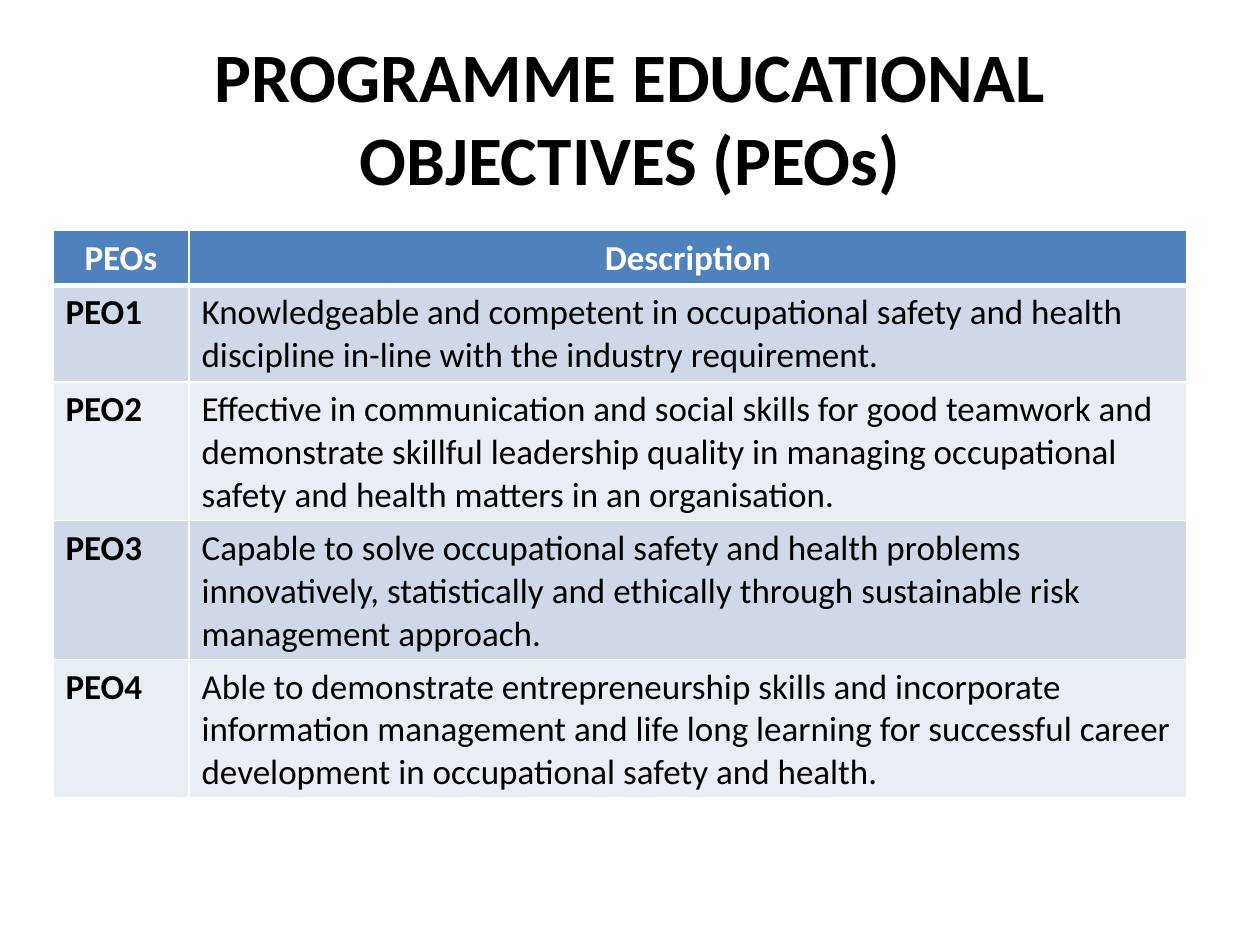
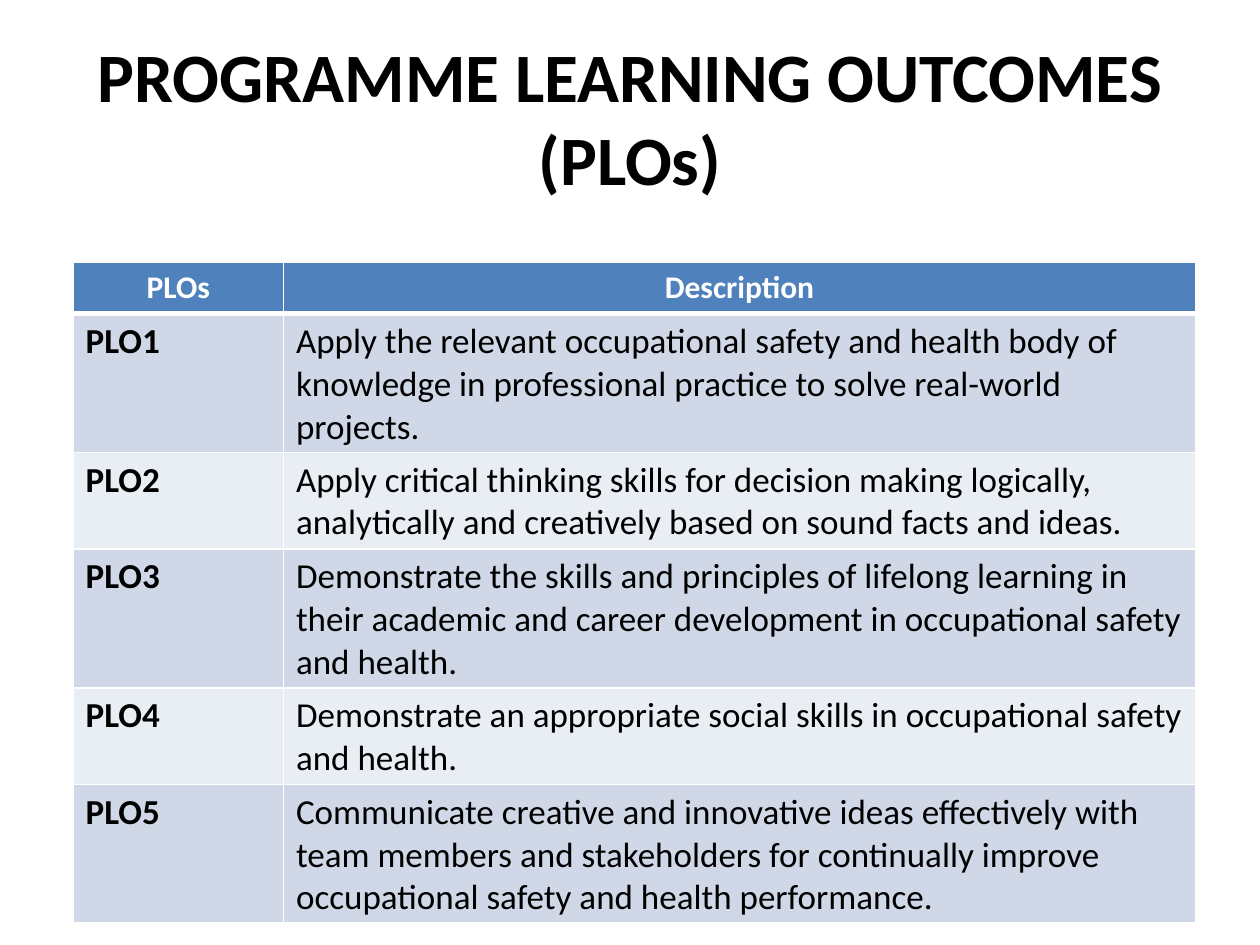
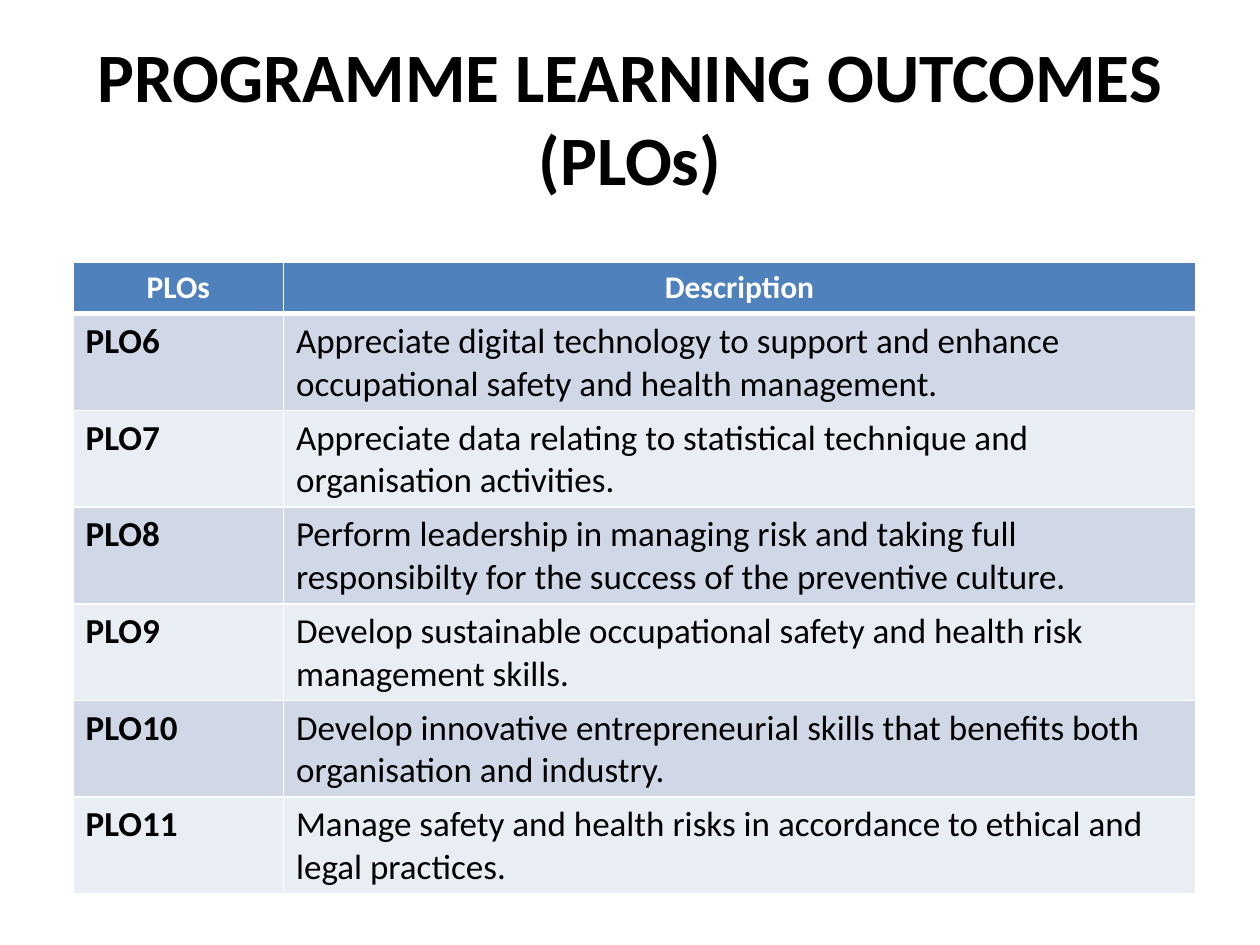
from lxml import etree
from pptx import Presentation
from pptx.dml.color import RGBColor
from pptx.enum.text import MSO_ANCHOR, PP_ALIGN
from pptx.oxml.ns import qn
from pptx.util import Inches, Pt

MID = MSO_ANCHOR.MIDDLE
LEFT = PP_ALIGN.LEFT
CENTER = PP_ALIGN.CENTER

HUES = {
    "text": "000000",
    "white": "FFFFFF",
    "head": "4F81BD",
    "odd": "D0D8E8",
    "even": "E9EDF4",
}

TITLE = {"size": Pt(39.6), "bold": True}
LABEL = {"size": Pt(20), "bold": True}
BODY = {"size": Pt(20), "bold": False}

ROW = 0.41
THIN = 1
THICK = 3

PEO = {
    "title": "PROGRAMME EDUCATIONAL OBJECTIVES (PEOs)",
    "head": "PEOs",
    "size": 20,
    "spot": (0.42, 1.83),
    "cols": (1.08, 7.92),
}
PLO = {
    "title": "PROGRAMME LEARNING OUTCOMES (PLOs)",
    "head": "PLOs",
    "size": 18,
    "spot": (0.58, 2.08),
    "cols": (1.67, 7.24),
}

GOALS = [
    "Knowledgeable and competent in occupational safety and health discipline in-line with the industry requirement.",
    "Effective in communication and social skills for good teamwork and demonstrate skillful leadership quality "
    "in managing occupational safety and health matters in an organisation.",
    "Capable to solve occupational safety and health problems innovatively, statistically and ethically "
    "through sustainable risk management approach.",
    "Able to demonstrate entrepreneurship skills and incorporate information management and life long learning "
    "for successful career development in occupational safety and health.",
]
SKILLS = [
    "Apply the relevant occupational safety and health body of knowledge in professional practice "
    "to solve real-world projects.",
    "Apply critical thinking skills for decision making logically, analytically and creatively "
    "based on sound facts and ideas.",
    "Demonstrate the skills and principles of lifelong learning in their academic and career development "
    "in occupational safety and health.",
    "Demonstrate an appropriate social skills in occupational safety and health.",
    "Communicate creative and innovative ideas effectively with team members and stakeholders "
    "for continually improve occupational safety and health performance.",
    "Appreciate digital technology to support and enhance occupational safety and health management.",
    "Appreciate data relating to statistical technique and organisation activities.",
    "Perform leadership in managing risk and taking full responsibilty for the success of the preventive culture.",
    "Develop sustainable occupational safety and health risk management skills.",
    "Develop innovative entrepreneurial skills that benefits both organisation and industry.",
    "Manage safety and health risks in accordance to ethical and legal practices.",
]
SPLIT = 5


def write(frame, text, form, hue="text", align=LEFT):
    para = frame.paragraphs[0]
    para.alignment = align
    run = para.add_run()
    run.text = text
    for name, value in {"name": "Calibri", **form}.items():
        setattr(run.font, name, value)
    run.font.color.rgb = RGBColor.from_string(HUES[hue])


def add_title(slide, text):
    box = slide.shapes.add_textbox(Inches(0.5), Inches(0.3), Inches(9), Inches(1.25))
    frame = box.text_frame
    for name, value in {"word_wrap": True, "vertical_anchor": MID}.items():
        setattr(frame, name, value)
    write(frame, text, TITLE, align=CENTER)


def add_edges(cell, top, bottom):
    props = cell._tc.get_or_add_tcPr()
    for side, width in {"L": THIN, "R": THIN, "T": top, "B": bottom}.items():
        line = etree.SubElement(props, qn(f"a:ln{side}"), w=str(Pt(width)))
        fill = etree.SubElement(line, qn("a:solidFill"))
        etree.SubElement(fill, qn("a:srgbClr"), val=HUES["white"])


def paint(cell, hue, top=THIN, bottom=THIN):
    add_edges(cell, top, bottom)
    cell.fill.solid()
    cell.fill.fore_color.rgb = RGBColor.from_string(HUES[hue])


def add_grid(slide, kind, rows):
    left, top = kind["spot"]
    cols = kind["cols"]
    count = len(rows) + 1
    shape = slide.shapes.add_table(
        count, len(cols), Inches(left), Inches(top), Inches(sum(cols)), Inches(ROW * count)
    )
    grid = shape.table
    for col, width in zip(grid.columns, cols):
        col.width = Inches(width)
    for row in grid.rows:
        row.height = Inches(ROW)
    head = {"size": Pt(kind["size"]), "bold": True}
    for cell, text in zip(grid.rows[0].cells, (kind["head"], "Description")):
        paint(cell, "head", bottom=THICK)
        write(cell.text_frame, text, head, "white", CENTER)
    for num, pair in enumerate(rows, 1):
        for cell, text, form in zip(grid.rows[num].cells, pair, (LABEL, BODY)):
            paint(cell, "odd" if num % 2 else "even", top=THICK if num == 1 else THIN)
            write(cell.text_frame, text, form)


def add_page(deck, kind, texts, start=1):
    slide = deck.slides.add_slide(deck.slide_layouts[6])
    add_title(slide, kind["title"])
    stem = kind["head"][:-1]
    add_grid(slide, kind, [(f"{stem}{num}", text) for num, text in enumerate(texts, start)])


def main():
    deck = Presentation()
    deck.slide_width = Inches(10)
    deck.slide_height = Inches(7.5)
    add_page(deck, PEO, GOALS)
    add_page(deck, PLO, SKILLS[:SPLIT])
    add_page(deck, PLO, SKILLS[SPLIT:], SPLIT + 1)
    deck.save("out.pptx")


if __name__ == "__main__":
    main()
